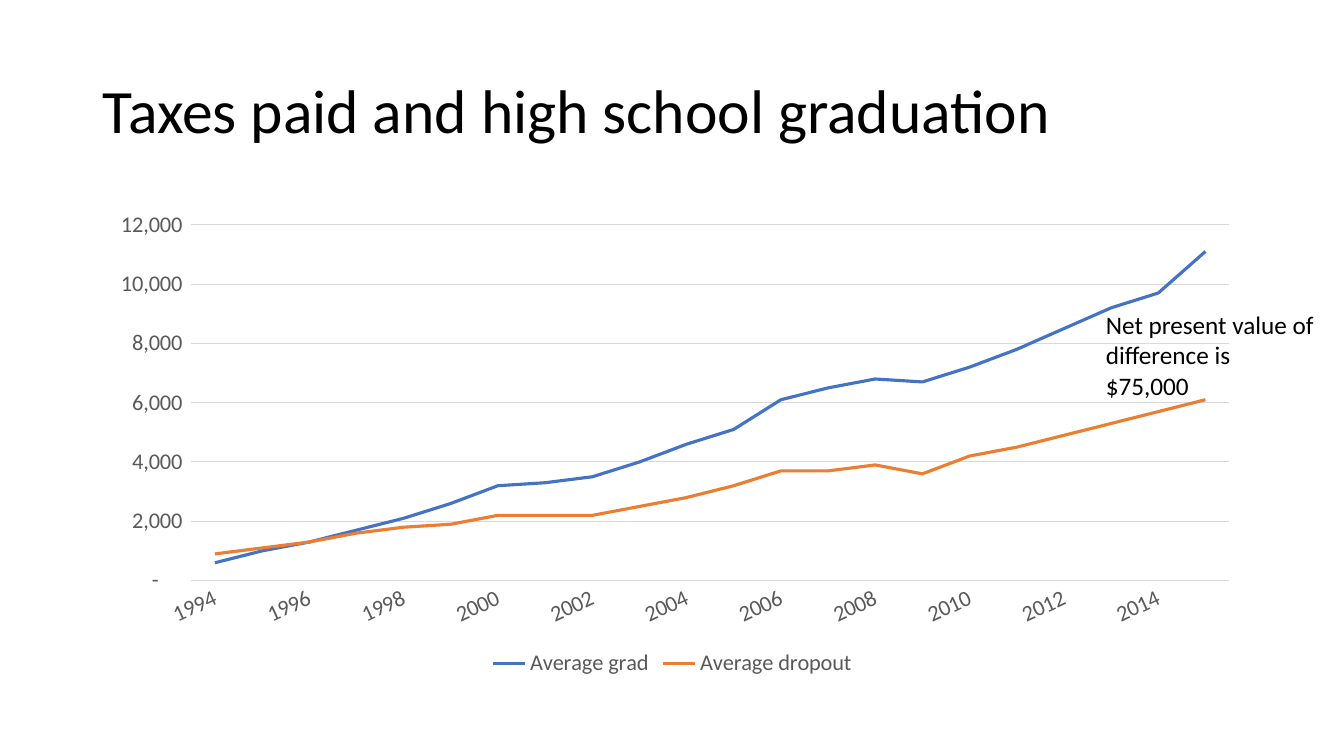
from pptx import Presentation
from pptx.chart.data import CategoryChartData
from pptx.dml.color import RGBColor
from pptx.enum.chart import XL_CHART_TYPE, XL_LEGEND_POSITION, XL_TICK_MARK
from pptx.enum.text import MSO_ANCHOR, PP_ALIGN
from pptx.util import Inches, Pt

LINE = XL_CHART_TYPE.LINE
BOTTOM = XL_LEGEND_POSITION.BOTTOM
NO_TICK = XL_TICK_MARK.NONE
MIDDLE = MSO_ANCHOR.MIDDLE
LEFT = PP_ALIGN.LEFT

# Content
TITLE = "Taxes paid and high school graduation"
NOTE = ["Net present value of difference is", "$75,000"]
YEARS = [str(year) for year in range(1994, 2016)]
TAXES = {
    "Average grad": [600, 1000, 1300, 1700, 2100, 2600, 3200, 3300, 3500, 4000, 4600,
                     5100, 6100, 6500, 6800, 6700, 7200, 7800, 8500, 9200, 9700, 11100],
    "Average dropout": [900, 1100, 1300, 1600, 1800, 1900, 2200, 2200, 2200, 2500, 2800,
                        3200, 3700, 3700, 3900, 3600, 4200, 4500, 4900, 5300, 5700, 6100],
}
FORMAT = '_-* #,##0_-;\\-* #,##0_-;_-* "-"??_-;_-@_'
COLORS = {"Average grad": "4472C4", "Average dropout": "ED7D31",
          "text": "000000", "label": "595959", "grid": "D9D9D9"}
SIDE, WIDTH = 0.92, 11.5


def color(name):
    return RGBColor.from_string(COLORS[name])


def style(font, size, name):
    font.name = "Calibri"
    font.size = Pt(size)
    font.color.rgb = color(name)


def rule(line, name, width):
    line.color.rgb = color(name)
    line.width = Pt(width)


def box(*lengths):
    return [Inches(length) for length in lengths]


deck = Presentation()
deck.slide_width, deck.slide_height = box(13.33, 7.5)
slide = deck.slides.add_slide(deck.slide_layouts[5])

# Title
title = slide.shapes.title
title.left, title.top, title.width, title.height = box(SIDE, 0.4, WIDTH, 1.45)
title.text_frame.text = TITLE
title.text_frame.vertical_anchor = MIDDLE
head = title.text_frame.paragraphs[0]
head.alignment = LEFT
head.line_spacing = 0.9
style(head.font, 44, "text")

# Line chart
data = CategoryChartData()
data.categories = YEARS
for name, values in TAXES.items():
    data.add_series(name, values)
chart = slide.shapes.add_chart(LINE, *box(SIDE, 2, WIDTH, 4.76), data).chart
chart.has_title = False
style(chart.font, 16, "text")
chart.plots[0].vary_by_categories = False
for series in chart.plots[0].series:
    series.smooth = False
    rule(series.format.line, series.name, 2.25)

# Axes
years, taxes = chart.category_axis, chart.value_axis
for axis in (years, taxes):
    axis.major_tick_mark = axis.minor_tick_mark = NO_TICK
    style(axis.tick_labels.font, 16, "label")
rule(years.format.line, "grid", 0.75)
turn = years._element.txPr.bodyPr
turn.set("rot", str(-25 * 60000))
turn.set("vert", "horz")
taxes.minimum_scale, taxes.maximum_scale, taxes.major_unit = 0, 12000, 2000
taxes.format.line.fill.background()
rule(taxes.major_gridlines.format.line, "grid", 0.75)
taxes.tick_labels.number_format = FORMAT
taxes.tick_labels.number_format_is_linked = False

# Legend
chart.has_legend = True
chart.legend.position = BOTTOM
chart.legend.include_in_layout = False
style(chart.legend.font, 16, "label")

# Note
frame = slide.shapes.add_textbox(*box(10.87, 3.02, 2.27, 1.01)).text_frame
frame.word_wrap = True
frame.text = "\n".join(NOTE)
for line in frame.paragraphs:
    style(line.font, 18, "text")

deck.save("out.pptx")
